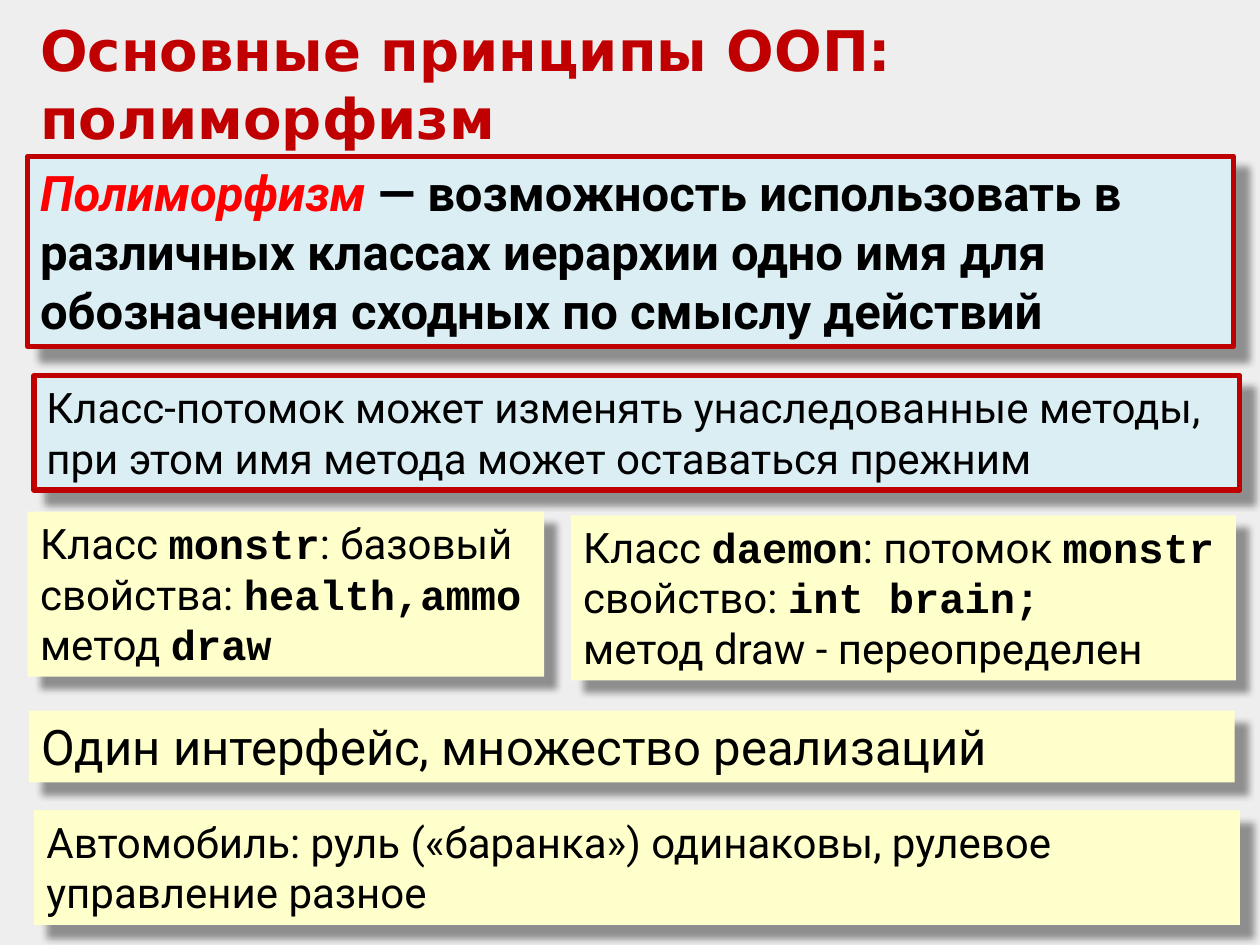
from lxml.etree import SubElement
from pptx import Presentation
from pptx.dml.color import RGBColor
from pptx.enum.shapes import MSO_SHAPE
from pptx.enum.text import MSO_ANCHOR, MSO_AUTO_SIZE, PP_ALIGN
from pptx.oxml.ns import qn
from pptx.util import Inches, Pt

BACKGROUND = RGBColor(0xEE, 0xEE, 0xEE)
DARK_RED = RGBColor(0xC0, 0x00, 0x00)
RED = RGBColor(0xFF, 0x00, 0x00)
BLACK = RGBColor(0x00, 0x00, 0x00)
PALE_BLUE = RGBColor(0xDB, 0xEE, 0xF4)
PALE_YELLOW = RGBColor(0xFF, 0xFF, 0xCC)

TITLE_FONT = "DejaVu Sans"
BODY_FONT = "Roboto"
CODE_FONT = "Courier New"

WIDE = 9.57


def add_span(para, text, size, font=BODY_FONT, color=BLACK, bold=False, italic=False):
    span = para.add_run()
    span.text = text
    span.font.name = font
    span.font.size = Pt(size)
    span.font.color.rgb = color
    span.font.bold = bold
    span.font.italic = italic


def code(text):
    """Return a span description for a bold name in the code font."""
    return text, {"font": CODE_FONT, "bold": True}


def set_frame(frame, anchor):
    frame.word_wrap = True
    frame.auto_size = MSO_AUTO_SIZE.SHAPE_TO_FIT_TEXT
    frame.vertical_anchor = anchor


def add_shadow(box):
    """Cast a soft black shadow down and to the right."""
    box.shadow.inherit = False
    effects = box._element.spPr.find(qn("a:effectLst"))
    shadow = SubElement(effects, qn("a:outerShdw"), blurRad=str(Pt(4)),
                        dist=str(Pt(10)), dir=str(45 * 60000),
                        algn="tl", rotWithShape="0")
    color = SubElement(shadow, qn("a:srgbClr"), val=str(BLACK))
    SubElement(color, qn("a:alpha"), val="40000")


def add_box(slide, place, lines, size=24, fill=PALE_YELLOW, border=None):
    """Add a shadowed box; a line is a list of strings or (text, format) pairs."""
    box = slide.shapes.add_shape(MSO_SHAPE.RECTANGLE, *map(Inches, place))
    box.fill.solid()
    box.fill.fore_color.rgb = fill
    if border is None:
        box.line.fill.background()
    else:
        box.line.color.rgb = border
        box.line.width = Pt(3)
    add_shadow(box)
    frame = box.text_frame
    set_frame(frame, MSO_ANCHOR.TOP)
    for index, line in enumerate(lines):
        para = frame.add_paragraph() if index else frame.paragraphs[0]
        para.alignment = PP_ALIGN.LEFT
        for part in line:
            text, style = (part, {}) if isinstance(part, str) else part
            add_span(para, text, size, **style)


def set_title(slide, text):
    title = slide.shapes.title
    title.left, title.top = Inches(0.22), Inches(0.07)
    title.width, title.height = Inches(9.61), Inches(1.18)
    set_frame(title.text_frame, MSO_ANCHOR.MIDDLE)
    para = title.text_frame.paragraphs[0]
    para.alignment = PP_ALIGN.LEFT
    add_span(para, text, 32, TITLE_FONT, DARK_RED, bold=True)


def add_definitions(slide):
    style = {"fill": PALE_BLUE, "border": DARK_RED}
    add_box(slide, (0.22, 1.24, WIDE, 1.51), [[
        ("Полиморфизм ", {"color": RED, "bold": True, "italic": True}),
        ("— возможность использовать в различных классах иерархии одно имя "
         "для обозначения сходных по смыслу действий", {"bold": True}),
    ]], size=28, **style)
    add_box(slide, (0.27, 2.98, WIDE, 0.91), [[
        "Класс-потомок может изменять унаследованные методы, "
        "при этом имя метода может оставаться прежним",
    ]], **style)


def add_classes(slide):
    add_box(slide, (0.22, 4.06, 4.1, 1.31), [
        ["Класс ", code("monstr"), ": базовый"],
        ["свойства: ", code("health,ammo")],
        ["метод ", code("draw")],
    ])
    add_box(slide, (4.53, 4.09, 5.28, 1.31), [
        ["Класс ", code("daemon"), ": потомок ", code("monstr")],
        ["свойство: ", code("int brain;")],
        ["метод draw - переопределен"],
    ])


def add_summary(slide):
    add_box(slide, (0.23, 5.64, WIDE, 0.57),
            [["Один интерфейс, множество реализаций"]], size=28)
    add_box(slide, (0.27, 6.43, WIDE, 0.91),
            [["Автомобиль: руль («баранка») одинаковы, рулевое управление разное"]])


def main():
    deck = Presentation()
    deck.slide_width, deck.slide_height = Inches(10), Inches(7.5)
    slide = deck.slides.add_slide(deck.slide_layouts[5])
    slide.background.fill.solid()
    slide.background.fill.fore_color.rgb = BACKGROUND
    set_title(slide, "Основные принципы ООП: полиморфизм")
    add_definitions(slide)
    add_classes(slide)
    add_summary(slide)
    deck.save("out.pptx")


if __name__ == "__main__":
    main()
